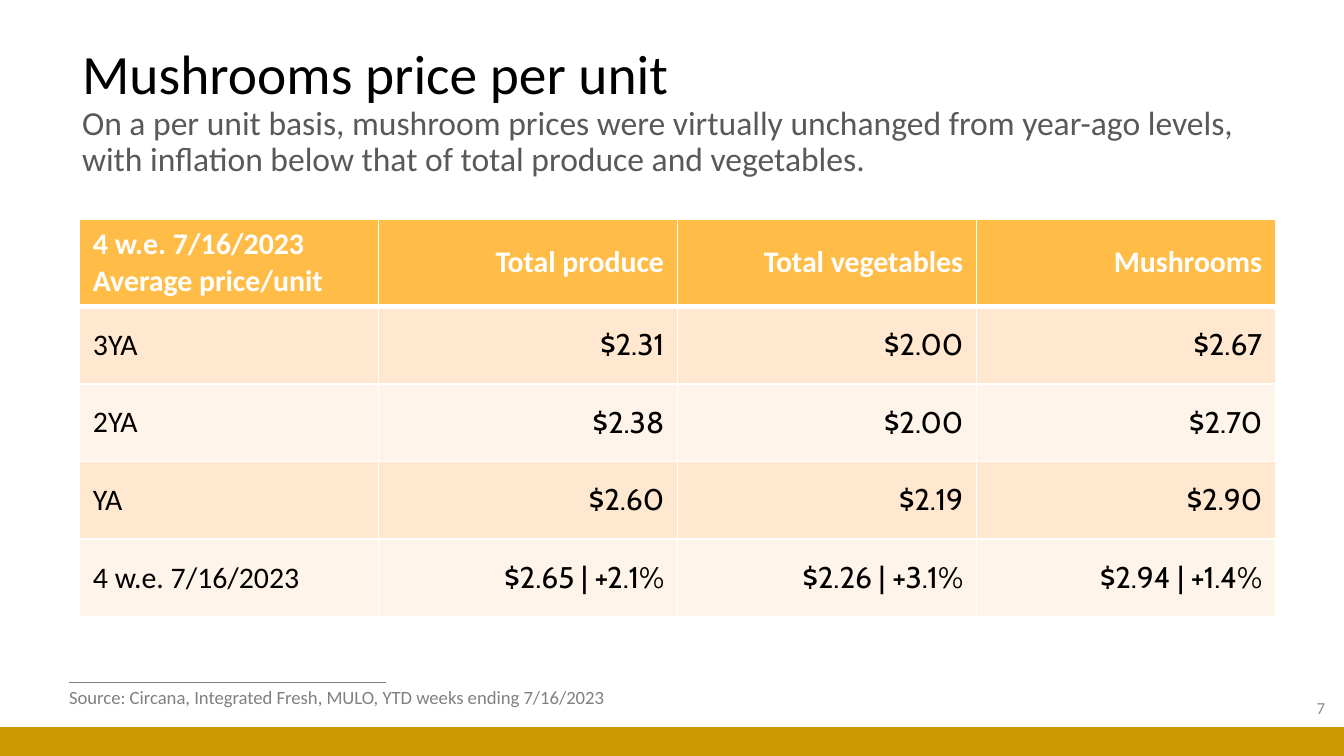
from lxml import etree
from pptx import Presentation
from pptx.dml.color import RGBColor
from pptx.enum.shapes import MSO_CONNECTOR, MSO_SHAPE
from pptx.enum.text import MSO_ANCHOR, PP_ALIGN
from pptx.oxml.ns import qn
from pptx.util import Pt

MIDDLE, TOP = MSO_ANCHOR.MIDDLE, MSO_ANCHOR.TOP
LEFT, RIGHT = PP_ALIGN.LEFT, PP_ALIGN.RIGHT
COLORS = {
    "white": "FFFFFF", "black": "000000", "subtitle": "595959",
    "source": "808080", "number": "8C8C8C", "footer": "CC9900",
    "header": "FFBD47", "band_dark": "FFE8CF", "band_light": "FFF4E9",
}


def add_run(paragraph, text, size, color, font="Calibri", bold=False):
    run = paragraph.add_run()
    run.text = text
    run.font.name = font
    run.font.size = Pt(size)
    run.font.bold = bold
    run.font.color.rgb = RGBColor.from_string(COLORS[color])


def add_text_box(left, top, width, height, anchor, wrap=True):
    """Add a text box and return its first paragraph."""
    box = slide.shapes.add_textbox(Pt(left), Pt(top), Pt(width), Pt(height))
    box.text_frame.word_wrap = wrap
    box.text_frame.vertical_anchor = anchor
    return box.text_frame.paragraphs[0]


presentation = Presentation()
presentation.slide_width = Pt(720)
presentation.slide_height = Pt(405)
slide = presentation.slides.add_slide(presentation.slide_layouts[6])

# Footer rule and band
rule = slide.shapes.add_connector(MSO_CONNECTOR.STRAIGHT, Pt(36.9), Pt(365.6), Pt(206.6), Pt(365.6))
rule.line.color.rgb = RGBColor.from_string(COLORS["source"])
rule.line.width = Pt(0.5)
etree.SubElement(rule._element.spPr, qn("a:effectLst"))

band = slide.shapes.add_shape(MSO_SHAPE.RECTANGLE, Pt(0), Pt(389.6), Pt(720), Pt(15.4))
band.shadow.inherit = False
band.fill.solid()
band.fill.fore_color.rgb = RGBColor.from_string(COLORS["footer"])
band.line.fill.background()

# Title, slide number and source
title = add_text_box(36.9, 41, 652.3, 38.9, MIDDLE)
title.line_spacing = 0.9
add_run(title, "Mushrooms price per unit", 29.7, "black")
title.add_line_break()
add_run(title, "On a per unit basis, mushroom prices were virtually unchanged from year-ago levels, "
        "with inflation below that of total produce and vegetables.", 18, "subtitle")

number = add_text_box(555, 368.2, 162, 21.6, MIDDLE)
number.alignment = RIGHT
add_run(number, "7", 9, "number")

source = add_text_box(30, 363.9, 310.5, 19.4, TOP, wrap=False)
add_run(source, "Source: Circana, Integrated Fresh, MULO, YTD weeks ending 7/16/2023", 10, "source")

# Price table
ROWS = [
    ["4 w.e. 7/16/2023\nAverage price/unit", "Total produce", "Total vegetables", "Mushrooms"],
    ["3YA", "$2.31", "$2.00", "$2.67"],
    ["2YA", "$2.38", "$2.00", "$2.70"],
    ["YA", "$2.60", "$2.19", "$2.90"],
    ["4 w.e. 7/16/2023", "$2.65 | +2.1%", "$2.26 | +3.1%", "$2.94 | +1.4%"],
]
HEADER_HEIGHT, ROW_HEIGHT, COLUMN_WIDTH = 46.5, 41.6, 160.2

table = slide.shapes.add_table(
    len(ROWS), len(ROWS[0]), Pt(42.6), Pt(117.5),
    Pt(COLUMN_WIDTH * len(ROWS[0])), Pt(HEADER_HEIGHT + ROW_HEIGHT * (len(ROWS) - 1)),
).table
for column in table.columns:
    column.width = Pt(COLUMN_WIDTH)

for row_index, texts in enumerate(ROWS):
    is_header = row_index == 0
    table.rows[row_index].height = Pt(HEADER_HEIGHT if is_header else ROW_HEIGHT)
    fill = "header" if is_header else ("band_light", "band_dark")[row_index % 2]
    border_widths = {"L": 1, "R": 1, "T": 3 if row_index == 1 else 1, "B": 3 if is_header else 1}
    for column_index, text in enumerate(texts):
        cell = table.cell(row_index, column_index)
        cell.vertical_anchor = MIDDLE
        properties = cell._tc.get_or_add_tcPr()
        for side, width in border_widths.items():
            border = etree.SubElement(properties, qn(f"a:ln{side}"), w=str(Pt(width)))
            border_fill = etree.SubElement(border, qn("a:solidFill"))
            etree.SubElement(border_fill, qn("a:srgbClr"), val=COLORS["white"])
        cell.fill.solid()
        cell.fill.fore_color.rgb = RGBColor.from_string(COLORS[fill])
        is_price = not is_header and column_index > 0
        for line_index, line in enumerate(text.split("\n")):
            frame = cell.text_frame
            paragraph = frame.add_paragraph() if line_index else frame.paragraphs[0]
            paragraph.alignment = RIGHT if column_index else LEFT
            add_run(paragraph, line, 16, "white" if is_header else "black",
                    font="Cabin" if is_price else "Calibri", bold=is_header)

presentation.save("out.pptx")
